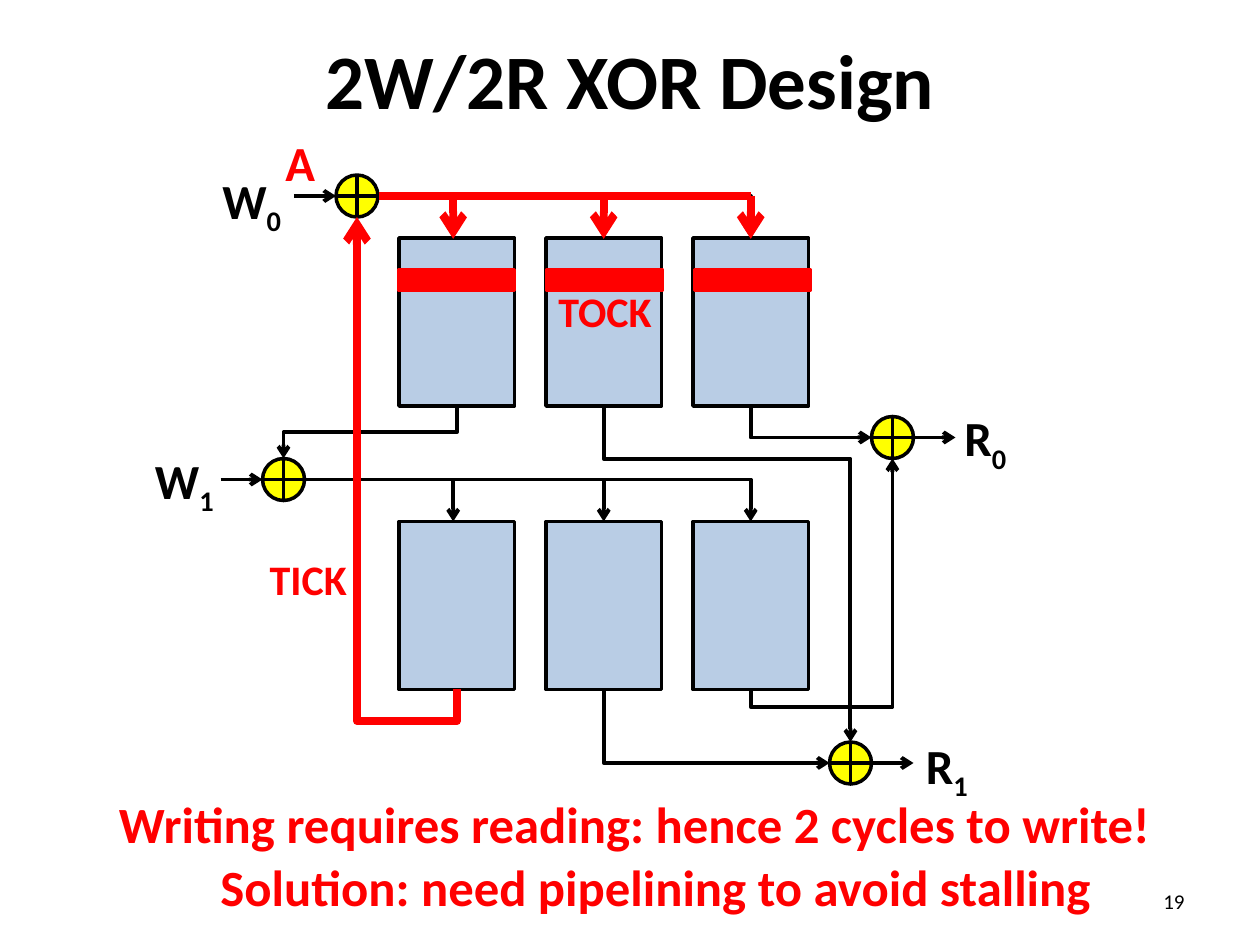
from dataclasses import dataclass

from lxml import etree
from pptx import Presentation
from pptx.dml.color import RGBColor
from pptx.enum.shapes import MSO_CONNECTOR, MSO_SHAPE
from pptx.enum.text import MSO_ANCHOR, PP_ALIGN
from pptx.oxml.ns import qn
from pptx.util import Pt

RECT, OVAL = MSO_SHAPE.RECTANGLE, MSO_SHAPE.OVAL
STRAIGHT, ELBOW = MSO_CONNECTOR.STRAIGHT, MSO_CONNECTOR.ELBOW
LEFT, CENTER, RIGHT = PP_ALIGN.LEFT, PP_ALIGN.CENTER, PP_ALIGN.RIGHT
TOP, MIDDLE = MSO_ANCHOR.TOP, MSO_ANCHOR.MIDDLE


@dataclass(frozen=True)
class Theme:
    font: str = "Calibri"
    black: RGBColor = RGBColor(0, 0, 0)
    red: RGBColor = RGBColor(0xFF, 0, 0)
    bank: RGBColor = RGBColor(0xB9, 0xCD, 0xE5)
    gate: RGBColor = RGBColor(0xFF, 0xFF, 0)
    title: float = 44
    note: float = 29
    port: float = 28
    phase: float = 24
    number: float = 12
    outline: float = 2
    wire: float = 2.25
    active: float = 4.5


class Diagram:
    def __init__(self, slide, theme):
        self.s, self.t = slide, theme

    def style(self, p, size, color, bold, align):
        p.alignment = align
        p.font.name, p.font.size, p.font.bold = self.t.font, Pt(size), bold
        p.font.color.rgb = color

    def title(self, text, x, y, w, h):
        sp = self.s.shapes.title
        sp.left, sp.top, sp.width, sp.height = Pt(x), Pt(y), Pt(w), Pt(h)
        tf = sp.text_frame
        tf.text, tf.vertical_anchor = text, MIDDLE
        self.style(tf.paragraphs[0], self.t.title, self.t.black, True, CENTER)

    def text(self, text, x, y, w, h, size, color, sub="", bold=True,
             align=LEFT, anchor=TOP):
        tf = self.s.shapes.add_textbox(Pt(x), Pt(y), Pt(w), Pt(h)).text_frame
        tf.word_wrap, tf.vertical_anchor = False, anchor
        p = tf.paragraphs[0]
        p.add_run().text = text
        if sub:
            r = p.add_run()
            r.text = sub
            r._r.get_or_add_rPr().set("baseline", "-25000")
        self.style(p, size, color, bold, align)

    def shape(self, kind, x, y, w, h, fill, line):
        sp = self.s.shapes.add_shape(kind, Pt(x), Pt(y), Pt(w), Pt(h))
        sp.shadow.inherit = False
        sp.fill.solid()
        sp.fill.fore_color.rgb = fill
        sp.line.color.rgb, sp.line.width = line, Pt(self.t.outline)

    def connect(self, kind, start, end, active, arrow):
        c = self.s.shapes.add_connector(kind, *(Pt(v) for v in (*start, *end)))
        c.line.color.rgb = self.t.red if active else self.t.black
        c.line.width = Pt(self.t.active if active else self.t.wire)
        spPr = c._element.spPr
        etree.SubElement(spPr, qn("a:effectLst"))
        if arrow:
            ln = spPr.find(qn("a:ln"))
            etree.SubElement(ln, qn("a:tailEnd")).set("type", "arrow")
        return spPr

    def line(self, start, end, active=False, arrow=True):
        self.connect(STRAIGHT, start, end, active, arrow)

    def elbow(self, start, end, bend=None, vertical=False, active=False):
        """One corner, or two when bend gives the place of the middle leg."""
        turn = 0
        if vertical:  # lay the connector out sideways, then turn it
            dx, dy = end[0] - start[0], end[1] - start[1]
            cx, cy = start[0] + dx / 2, start[1] + dy / 2
            turn = 270 if dx > 0 and dy > 0 else 90
            sign = 1 if turn == 90 else -1
            hx, hy = sign * dy / 2, -sign * dx / 2
            start, end = (cx - hx, cy - hy), (cx + hx, cy + hy)
        spPr = self.connect(ELBOW, start, end, active, True)
        if turn:
            spPr.find(qn("a:xfrm")).set("rot", str(turn * 60000))
        geom = spPr.find(qn("a:prstGeom"))
        if bend is None:
            geom.set("prst", "bentConnector2")
        else:
            gd = etree.SubElement(geom.find(qn("a:avLst")), qn("a:gd"))
            gd.set("name", "adj1")
            gd.set("fmla", f"val {round(bend * 100000)}")

    def xor(self, cx, cy, r=12):
        self.shape(OVAL, cx - r, cy - r, 2 * r, 2 * r, self.t.gate, self.t.black)
        self.line((cx, cy - r), (cx, cy + r), arrow=False)
        self.line((cx + r, cy), (cx - r, cy), arrow=False)


def main():
    prs = Presentation()
    prs.slide_width, prs.slide_height = Pt(720), Pt(540)
    t = Theme()
    d = Diagram(prs.slides.add_slide(prs.slide_layouts[5]), t)

    d.title("2W/2R XOR Design", 36, 0, 648, 90)
    d.text("19", 516, 500.5, 168, 28.75, t.number, t.black, bold=False,
           align=RIGHT, anchor=MIDDLE)

    # Memory banks: two rows of three
    bank_w, bank_h = 66, 96
    lefts = [228 + 84 * i for i in range(3)]
    mids = [x + bank_w / 2 for x in lefts]
    taps = [mids[0] - 2, *mids[1:]]
    top1, top2 = 136, 298
    bottom1, bottom2 = top1 + bank_h, top2 + bank_h
    for y in (top1, top2):
        for x in lefts:
            d.shape(RECT, x, y, bank_w, bank_h, t.bank, t.black)

    # XOR gates with their port arrows and labels
    w0, w1, r0, r1 = (204, 112), (162, 274), (510, 250), (486, 436)
    for x, y in (w0, w1, r0, r1):
        d.xor(x, y)
    for x, y in (w0, w1):
        d.line((x - 36, y), (x - 12, y))
    for x, y in (r0, r1):
        d.line((x + 12, y), (x + 36, y))
    for name, sub, x, y, w in (("W", "0", 120, 94, 50), ("W", "1", 81.5, 254, 50),
                               ("R", "0", 544, 229.5, 40), ("R", "1", 522, 416.5, 40)):
        d.text(name, x, y, w, 41, t.port, t.black, sub)

    # Write buses into each row
    for (x, y), top in ((w0, top1), (w1, top2)):
        d.elbow((x + 12, y), (taps[2], top))
        for tap in taps[:2]:
            d.line((tap, y), (tap, top))

    # Read paths out of the banks
    d.elbow((mids[0], bottom1), (w1[0], w1[1] - 12), 0.5, vertical=True)
    d.elbow((mids[1], bottom1), (r1[0], r1[1] - 12), 0.157, vertical=True)
    d.elbow((mids[2], bottom1), (r0[0] - 12, r0[1]), vertical=True)
    d.elbow((mids[1], bottom2), (r1[0] - 12, r1[1]), vertical=True)
    d.elbow((mids[2], bottom2), (r0[0], r0[1] + 12), -0.075, vertical=True)

    # Tick: read the old value back to the W0 gate
    d.elbow((mids[0], bottom2), (w0[0], w0[1] + 12), -0.067, vertical=True, active=True)
    d.text("TICK", 147, 313, 59, 36, t.phase, t.red)
    d.text("A", 156, 72, 32, 41, t.port, t.red)

    # Tock: write the result to all three banks of the first row
    for i, (start, tap) in enumerate(zip((216.5, 253.5, 337), taps)):
        d.line((start, w0[1]), (tap, w0[1]), active=True, arrow=False)
        d.line((tap, w0[1]), (tap, top1 + 0.5), active=True)
        d.shape(RECT, lefts[i] + i * 0.5, 154, bank_w, 12, t.red, t.red)
    d.text("TOCK", 312, 159.5, 68, 36, t.phase, t.red)

    # Conclusions
    for i, note in enumerate(("Writing requires reading: hence 2 cycles to write!",
                              "Solution: need pipelining to avoid stalling")):
        d.text(note, 53 + 12 * i, 449.5 + 36 * i, 620, 39, t.note, t.red, align=CENTER)

    prs.save("out.pptx")


if __name__ == "__main__":
    main()
